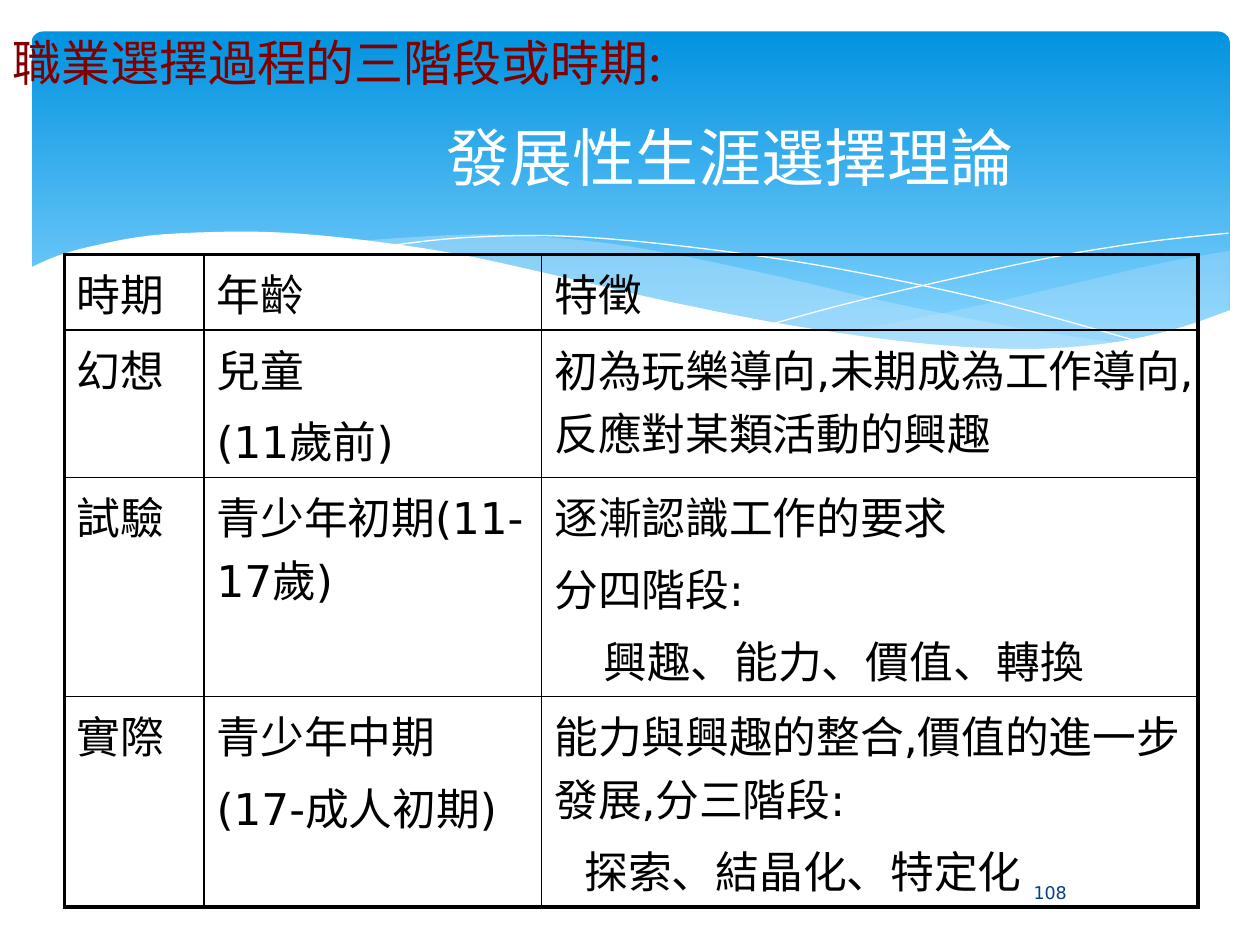
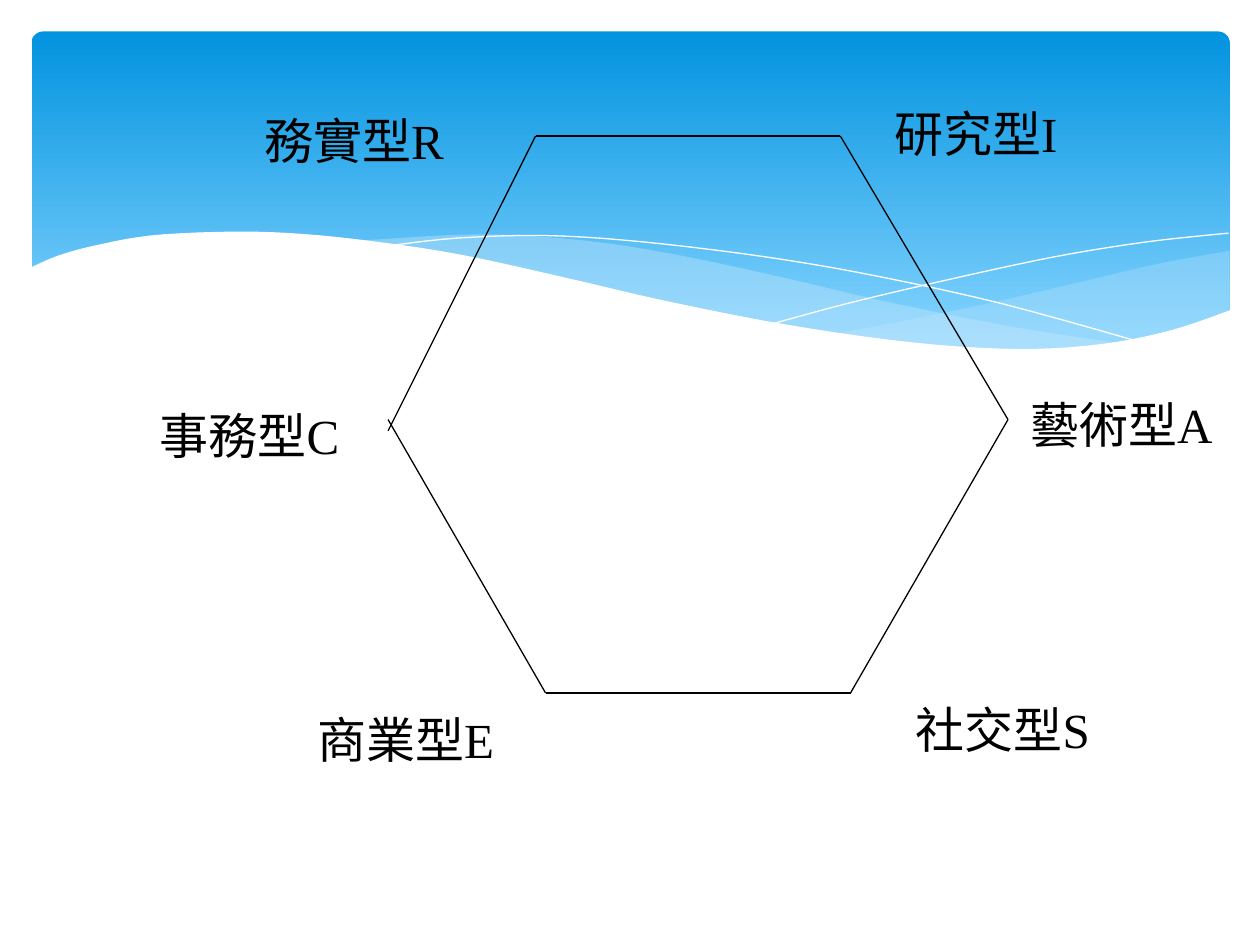
import dataclasses
import typing

import lxml.etree
import pptx
import pptx.dml.color
import pptx.enum.shapes
import pptx.enum.text
import pptx.oxml.ns
import pptx.util

Inches = pptx.util.Inches
Pt = pptx.util.Pt
RGB = pptx.dml.color.RGBColor
qn = pptx.oxml.ns.qn
Align = pptx.enum.text.PP_ALIGN
Anchor = pptx.enum.text.MSO_ANCHOR
Point = tuple[float, float]

# Colours and text formats
BLACK = RGB(0x00, 0x00, 0x00)
WHITE = RGB(0xFF, 0xFF, 0xFF)
DEEP = RGB(0x02, 0x93, 0xE0)
LIGHT = RGB(0x83, 0xD3, 0xFE)
PALE = RGB(0xC6, 0xE7, 0xFC)
NAVY = RGB(0x07, 0x3E, 0x87)
MAROON = RGB(0x80, 0x00, 0x00)
ASIAN = "Noto Sans CJK SC"

TITLE = {"name": "Cabin", "size": Pt(36)}
HEAD = {"name": ASIAN, "size": Pt(28)}
CELL = {"name": "DejaVu Sans", "size": Pt(25)}
NUMBER = {"name": "DejaVu Sans", "size": Pt(10)}
LABEL = {"name": "Times New Roman", "size": Pt(28)}


@dataclasses.dataclass
class Wave:
    """Smooth edges joined end to end; an open wave is a thin line."""
    edges: list[list[Point]]
    tint: RGB
    alpha: int = 100
    closed: bool = True


@dataclasses.dataclass
class Label:
    text: str
    left: float
    top: float
    width: float = 1.66
    height: float = 0.57
    form: dict = dataclasses.field(default_factory=lambda: LABEL)
    tint: RGB = BLACK
    align: Align = Align.LEFT
    anchor: Anchor = Anchor.TOP


# The band's waves, from back to front
WAVES = [
    Wave([[(9.76, 1.99), (9.21, 2.09), (8.61, 2.23), (7.79, 2.42), (7.06, 2.57), (6.61, 2.65)],
          [(6.61, 2.65), (7.18, 2.72), (7.81, 2.77), (8.44, 2.77), (9.05, 2.69), (9.76, 2.47)]],
         PALE, 29),
    Wave([[(8.93, 2.73), (8.07, 2.6), (7.06, 2.4), (6.29, 2.22), (5.41, 2.03), (4.65, 1.91),
           (3.8, 1.86), (2.86, 1.91)],
          [(2.86, 1.91), (3.62, 2.03), (4.49, 2.22), (5.3, 2.4), (6.18, 2.58), (7.09, 2.72),
           (7.96, 2.78), (8.93, 2.73)]],
         PALE, 40),
    Wave([[(3.09, 1.95), (3.63, 1.89), (4.33, 1.87), (5.1, 1.92), (6.08, 2.04), (6.95, 2.19),
           (7.95, 2.41), (9.07, 2.72)]], WHITE, closed=False),
    Wave([[(6.13, 2.57), (6.72, 2.41), (7.48, 2.23), (8.36, 2.04), (9.1, 1.92), (9.75, 1.85)]],
         WHITE, closed=False),
    Wave([[(9.77, 2.46), (9.3, 2.62), (8.75, 2.73), (8.09, 2.77), (7.26, 2.72), (6.26, 2.58),
           (5.29, 2.39), (4.47, 2.2), (3.65, 2.02), (2.92, 1.91), (2.3, 1.85), (1.77, 1.84),
           (1.19, 1.87), (0.75, 1.95), (0.46, 2.03), (0.23, 2.13)],
          [(0.23, 3.29), (9.77, 3.29)]], WHITE),
]

# Table text: each cell is a list of (text, indent) lines
COLS = [1.11, 2.68, 5.21]
ROWS = [0.6, 1.17, 1.74, 1.67]
STAGES = [
    [[("時期", 0)], [("年齡", 0)], [("特徵", 0)]],
    [[("幻想", 0)], [("兒童", 0), ("(11歲前)", 0)],
     [("初為玩樂導向,未期成為工作導向,反應對某類活動的興趣", 0)]],
    [[("試驗", 0)], [("青少年初期(11-17歲)", 0)],
     [("逐漸認識工作的要求", 0), ("分四階段:", 0), ("興趣、能力、價值、轉換", 0.39)]],
    [[("實際", 0)], [("青少年中期", 0), ("(17-成人初期)", 0)],
     [("能力與興趣的整合,價值的進一步發展,分三階段:", 0), ("探索、結晶化、特定化", 0.24)]],
]

# Hexagon sides and the types at its corners
SIDES = [
    ((4.25, 1.08), (6.67, 1.08)), ((4.33, 5.5), (6.75, 5.5)),
    ((4.33, 5.5), (3.08, 3.33)), ((8, 3.33), (6.67, 1.08)),
    ((4.25, 1.08), (3.08, 3.42)), ((8, 3.33), (6.75, 5.5)),
]
TYPES = [
    Label("研究型I", 7, 0.77), Label("藝術型A", 8.08, 3.08), Label("社交型S", 7.17, 5.5),
    Label("商業型E", 2.42, 5.58), Label("事務型C", 1.17, 3.17), Label("務實型R", 2, 0.83),
]


def smooth(knots: list[Point], steps: int = 5) -> list[Point]:
    """Return points on a Catmull-Rom curve through the knots."""
    if len(knots) < 3:
        return knots
    ends = [knots[0], *knots, knots[-1]]
    curve = [knots[0]]
    for a, b, c, d in zip(ends, ends[1:], ends[2:], ends[3:]):
        for step in range(1, steps + 1):
            t = step / steps
            x, y = (
                (2 * q + (r - p) * t + (2 * p - 5 * q + 4 * r - s) * t ** 2
                 + (3 * q - p - 3 * r + s) * t ** 3) / 2
                for p, q, r, s in zip(a, b, c, d))
            curve.append((x, y))
    return curve


def draw_wave(slide: typing.Any, wave: Wave) -> None:
    spots = [(Inches(x), Inches(y)) for edge in wave.edges for x, y in smooth(edge)]
    pen = slide.shapes.build_freeform(*spots[0])
    pen.add_line_segments(spots[1:], close=wave.closed)
    shape = pen.convert_to_shape()
    shape.shadow.inherit = False
    if not wave.closed:
        shape.fill.background()
        shape.line.color.rgb = wave.tint
        shape.line.width = Pt(0)
        return
    shape.line.fill.background()
    shape.fill.solid()
    shape.fill.fore_color.rgb = wave.tint
    if wave.alpha < 100:
        tone = next(shape._element.spPr.iter(qn("a:srgbClr")))
        lxml.etree.SubElement(tone, qn("a:alpha"), val=str(wave.alpha * 1000))


def draw_band(slide: typing.Any) -> None:
    band = slide.shapes.add_shape(
        pptx.enum.shapes.MSO_SHAPE.ROUNDED_RECTANGLE,
        Inches(0.25), Inches(0.25), Inches(9.51), Inches(2.7))
    band.adjustments[0] = 0.034
    band.shadow.inherit = False
    band.line.fill.background()
    band.fill.gradient()
    band.fill.gradient_angle = 270
    for stop, tint, place in zip(band.fill.gradient_stops, (DEEP, LIGHT), (0, 0.9)):
        stop.color.rgb = tint
        stop.position = place
    for wave in WAVES:
        draw_wave(slide, wave)


def write(para: typing.Any, text: str, form: dict, tint: RGB) -> None:
    run = para.add_run()
    run.text = text
    for key, value in form.items():
        setattr(run.font, key, value)
    run.font.color.rgb = tint
    lxml.etree.SubElement(run._r.get_or_add_rPr(), qn("a:ea"), typeface=ASIAN)


def draw_label(slide: typing.Any, label: Label) -> None:
    box = slide.shapes.add_textbox(
        Inches(label.left), Inches(label.top), Inches(label.width), Inches(label.height))
    frame = box.text_frame
    for key, value in {"word_wrap": True, "vertical_anchor": label.anchor}.items():
        setattr(frame, key, value)
    para = frame.paragraphs[0]
    para.alignment = label.align
    write(para, label.text, label.form, label.tint)


def draw_side(slide: typing.Any, start: Point, end: Point) -> None:
    side = slide.shapes.add_connector(
        pptx.enum.shapes.MSO_CONNECTOR.STRAIGHT, *(Inches(n) for n in (*start, *end)))
    side.line.color.rgb = BLACK
    side.line.width = Pt(0.75)
    lxml.etree.SubElement(side._element.spPr, qn("a:effectLst"))


def set_edges(cell: typing.Any, outer: dict[str, bool]) -> None:
    """Rule the cell: thick on the table's outside, thin inside."""
    props = cell._tc.get_or_add_tcPr()
    for place, (side, thick) in enumerate(outer.items()):
        edge = lxml.etree.Element(qn(f"a:ln{side}"), w=str(int(Pt(2.25 if thick else 1))))
        fill = lxml.etree.SubElement(edge, qn("a:solidFill"))
        lxml.etree.SubElement(fill, qn("a:srgbClr"), val=str(BLACK))
        props.insert(place, edge)


def draw_table(slide: typing.Any) -> None:
    table = slide.shapes.add_table(
        len(ROWS), len(COLS), Inches(0.51), Inches(2.02),
        Inches(sum(COLS)), Inches(sum(ROWS))).table
    for key in ("first_row", "horz_banding"):
        setattr(table, key, False)
    for col, width in zip(table.columns, COLS):
        col.width = Inches(width)
    for i, height in enumerate(ROWS):
        table.rows[i].height = Inches(height)
        for j, lines in enumerate(STAGES[i]):
            cell = table.cell(i, j)
            cell.fill.background()
            set_edges(cell, {"L": j == 0, "R": j == len(COLS) - 1,
                             "T": i == 0, "B": i == len(ROWS) - 1})
            frame = cell.text_frame
            for k, (text, indent) in enumerate(lines):
                para = frame.add_paragraph() if k else frame.paragraphs[0]
                if k:
                    para.space_before = Pt(5)
                if indent:
                    para._p.get_or_add_pPr().set("marL", str(int(Inches(indent))))
                write(para, text, CELL, BLACK)


def main() -> None:
    deck = pptx.Presentation()
    deck.slide_width, deck.slide_height = Inches(10), Inches(7.5)
    stages, types = (deck.slides.add_slide(deck.slide_layouts[6]) for _ in range(2))
    for slide in (stages, types):
        draw_band(slide)

    # Stages of career choice
    mid = {"align": Align.CENTER, "anchor": Anchor.MIDDLE}
    draw_label(stages, Label("發展性生涯選擇理論", 2.09, 0.91, 7.41, 0.66, TITLE, WHITE, **mid))
    draw_table(stages)
    draw_label(stages, Label("108", 7.17, 6.83, 2.33, 0.5, NUMBER, NAVY, **mid))
    draw_label(stages, Label("職業選擇過程的三階段或時期:", 0, 0.21, 6.69, 0.57, HEAD, MAROON))

    # Hexagon of types
    for start, end in SIDES:
        draw_side(types, start, end)
    for label in TYPES:
        draw_label(types, label)

    deck.save("out.pptx")


if __name__ == "__main__":
    main()
